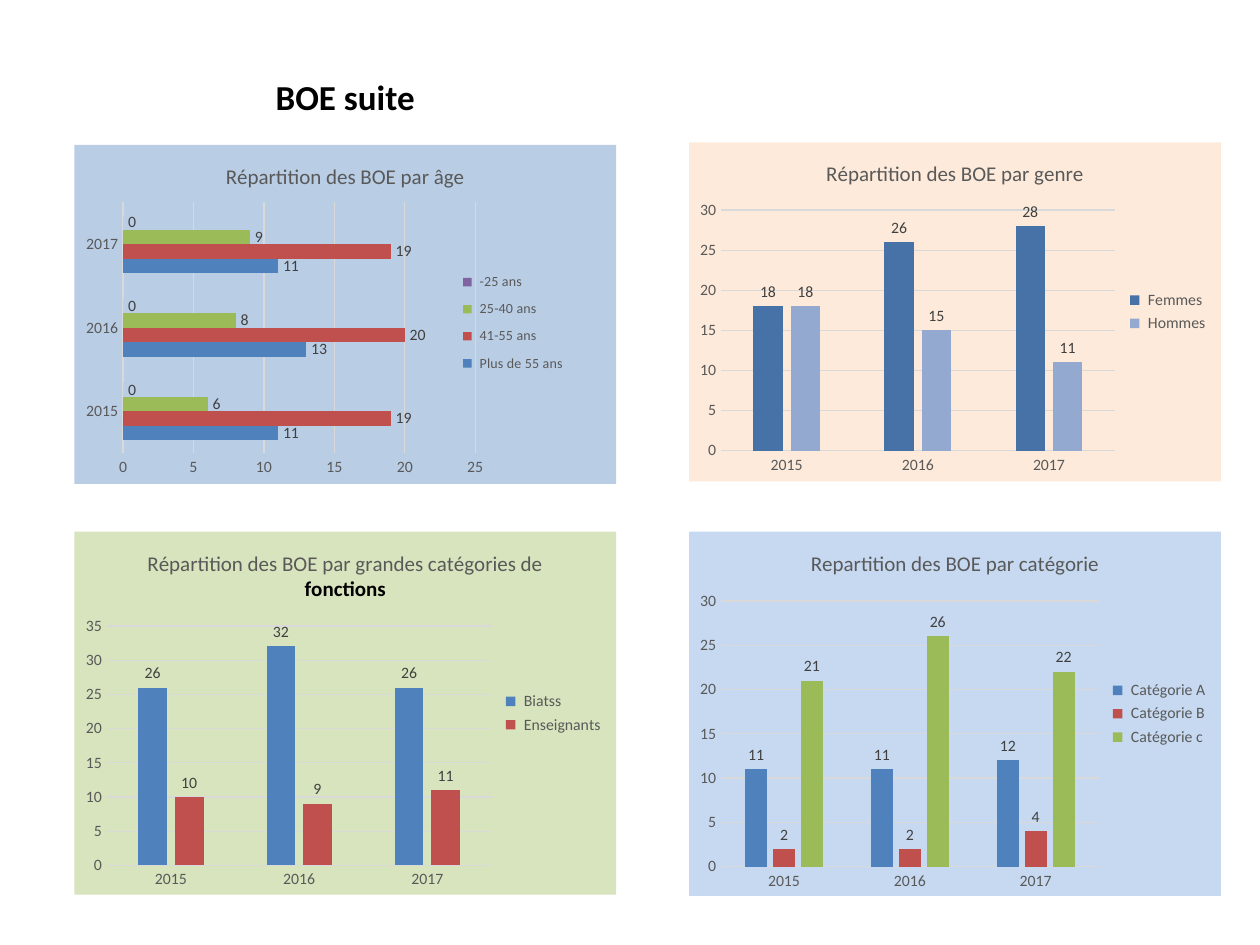
from lxml import etree
from pptx import Presentation
from pptx.chart.data import CategoryChartData
from pptx.dml.color import RGBColor
from pptx.enum.chart import (XL_CHART_TYPE, XL_LABEL_POSITION,
                             XL_LEGEND_POSITION, XL_TICK_MARK)
from pptx.enum.text import PP_ALIGN
from pptx.oxml import parse_xml
from pptx.util import Inches, Pt

BAR = XL_CHART_TYPE.BAR_CLUSTERED
COLUMN = XL_CHART_TYPE.COLUMN_CLUSTERED
OUTSIDE = XL_LABEL_POSITION.OUTSIDE_END
RIGHT = XL_LEGEND_POSITION.RIGHT
NO_TICK = XL_TICK_MARK.NONE
CENTER = PP_ALIGN.CENTER

COLORS = {
    "black": "000000", "gray": "595959", "dark": "404040", "grid": "D9D9D9",
    "blue": "4F81BD", "red": "C0504D", "green": "9BBB59", "purple": "8064A2",
    "steel": "4672A8", "pale": "93A9CF",
    "sky": "B9CDE5", "peach": "FDEADA", "lime": "D7E4BD", "ice": "C6D9F1",
}
YEARS = ["2015", "2016", "2017"]
NS = ('xmlns:c="http://schemas.openxmlformats.org/drawingml/2006/chart" '
      'xmlns:a="http://schemas.openxmlformats.org/drawingml/2006/main"')


def style(font, size, color, bold=False):
    values = {"name": "Calibri", "size": Pt(size), "bold": bold}
    for key, value in values.items():
        setattr(font, key, value)
    font.color.rgb = RGBColor.from_string(COLORS[color])


def place(part, box, inner=False):
    """Fix a plot area or legend at x, y, w, h as fractions of its chart."""
    for old in part.findall("{*}layout"):
        part.remove(old)
    layout = parse_xml(f"<c:layout {NS}><c:manualLayout/></c:layout>")
    items = [("layoutTarget", "inner")] if inner else []
    items += [("xMode", "edge"), ("yMode", "edge")]
    items += zip("xywh", box)
    for tag, value in items:
        name = etree.QName(layout.nsmap["c"], tag)
        etree.SubElement(layout[0], name).set("val", str(value))
    if inner:
        part.insert(0, layout)
    else:
        part.find("{*}legendPos").addnext(layout)


charts = [
    {"kind": BAR, "at": (0.59, 1.15, 4.3, 2.69), "fill": "sky",
     "title": ["Répartition des BOE par âge"], "top": 25,
     "gap": 182, "overlap": 0, "plot": (0.09, 0.17, 0.65, 0.74),
     "key": 8, "keybox": (0.7, 0.35, 0.22, 0.35),
     "series": [(" Plus de 55 ans", (11, 13, 11), "blue"),
                (" 41-55 ans", (19, 20, 19), "red"),
                (" 25-40 ans", (6, 8, 9), "green"),
                (" -25 ans", (0, 0, 0), "purple")]},
    {"kind": COLUMN, "at": (5.47, 1.13, 4.22, 2.69), "fill": "peach",
     "title": ["Répartition des BOE par genre"], "top": 30,
     "plot": (0.06, 0.2, 0.74, 0.71),
     "series": [(" Femmes", (18, 26, 28), "steel"),
                (" Hommes", (18, 15, 11), "pale")]},
    {"kind": COLUMN, "at": (0.59, 4.22, 4.3, 2.88), "fill": "lime",
     "title": ["Répartition des BOE par grandes catégories de", "fonctions"],
     "top": 35, "plot": (0.06, 0.26, 0.71, 0.66),
     "series": [(" Biatss", (26, 32, 26), "blue"),
                (" Enseignants", (10, 9, 11), "red")]},
    {"kind": COLUMN, "at": (5.47, 4.22, 4.22, 2.89), "fill": "ice",
     "title": ["Repartition des BOE par catégorie"], "top": 30,
     "plot": (0.06, 0.19, 0.71, 0.73),
     "series": [(" Catégorie A", (11, 11, 12), "blue"),
                (" Catégorie B", (2, 2, 4), "red"),
                (" Catégorie c", (21, 26, 22), "green")]},
]

deck = Presentation()
deck.slide_width, deck.slide_height = Inches(10), Inches(7.5)
slide = deck.slides.add_slide(deck.slide_layouts[6])

for item in charts:
    data = CategoryChartData()
    data.categories = YEARS
    for name, values, color in item["series"]:
        data.add_series(name, values)
    spot = [Inches(n) for n in item["at"]]
    chart = slide.shapes.add_chart(item["kind"], *spot, data).chart
    style(chart.font, 10, "black")

    # Background of the whole chart
    root = chart._chartSpace
    back = parse_xml(
        f'<c:spPr {NS}><a:solidFill><a:srgbClr val="{COLORS[item["fill"]]}"/>'
        "</a:solidFill><a:ln><a:noFill/></a:ln></c:spPr>")
    root.find("{*}chart").addnext(back)

    # Title: first line gray, any further line bold black
    chart.has_title = True
    frame = chart.chart_title.text_frame
    chart.chart_title.include_in_layout = False
    for n, line in enumerate(item["title"]):
        para = frame.add_paragraph() if n else frame.paragraphs[0]
        run = para.add_run()
        run.text = line
        style(run.font, 12, "black" if n else "gray", bold=n > 0)

    # Axes
    for axis in (chart.category_axis, chart.value_axis):
        axis.major_tick_mark = axis.minor_tick_mark = NO_TICK
        style(axis.tick_labels.font, 9, "gray")
    scale = chart.value_axis
    scale.minimum_scale, scale.maximum_scale = 0, item["top"]
    scale.major_unit = 5
    scale.has_major_gridlines = True
    scale.format.line.fill.background()
    for part in (chart.category_axis, scale.major_gridlines):
        part.format.line.width = Pt(0.75)
        part.format.line.color.rgb = RGBColor.from_string(COLORS["grid"])

    # Bars and their labels
    plot = chart.plots[0]
    plot.vary_by_categories = False
    plot.gap_width = item.get("gap", 219)
    plot.overlap = item.get("overlap", -27)
    for series, (name, values, color) in zip(plot.series, item["series"]):
        series.format.fill.solid()
        series.format.fill.fore_color.rgb = RGBColor.from_string(COLORS[color])
        labels = series.data_labels
        labels.show_value = True
        labels.position = OUTSIDE
        style(labels.font, 9, "dark")

    # Legend and plot area
    chart.has_legend = True
    chart.legend.position = RIGHT
    chart.legend.include_in_layout = False
    style(chart.legend.font, item.get("key", 9), "gray")
    place(root.find(".//{*}plotArea"), item["plot"], inner=True)
    if "keybox" in item:
        place(root.find(".//{*}legend"), item["keybox"])

head = slide.shapes.add_textbox(Inches(1.6), Inches(0.55),
                                Inches(2.28), Inches(0.44))
head.text_frame.word_wrap = True
para = head.text_frame.paragraphs[0]
para.alignment = CENTER
run = para.add_run()
run.text = "BOE suite"
style(run.font, 20, "black", bold=True)

deck.save("out.pptx")
